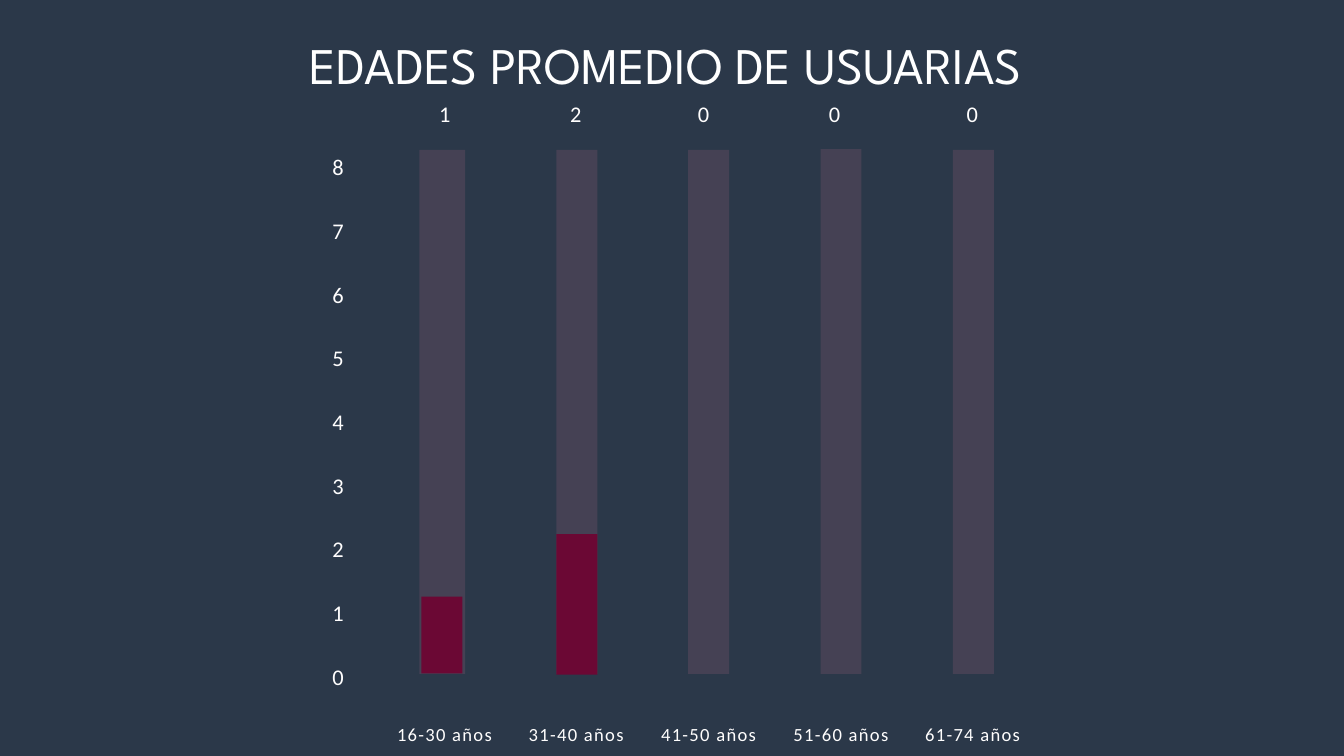
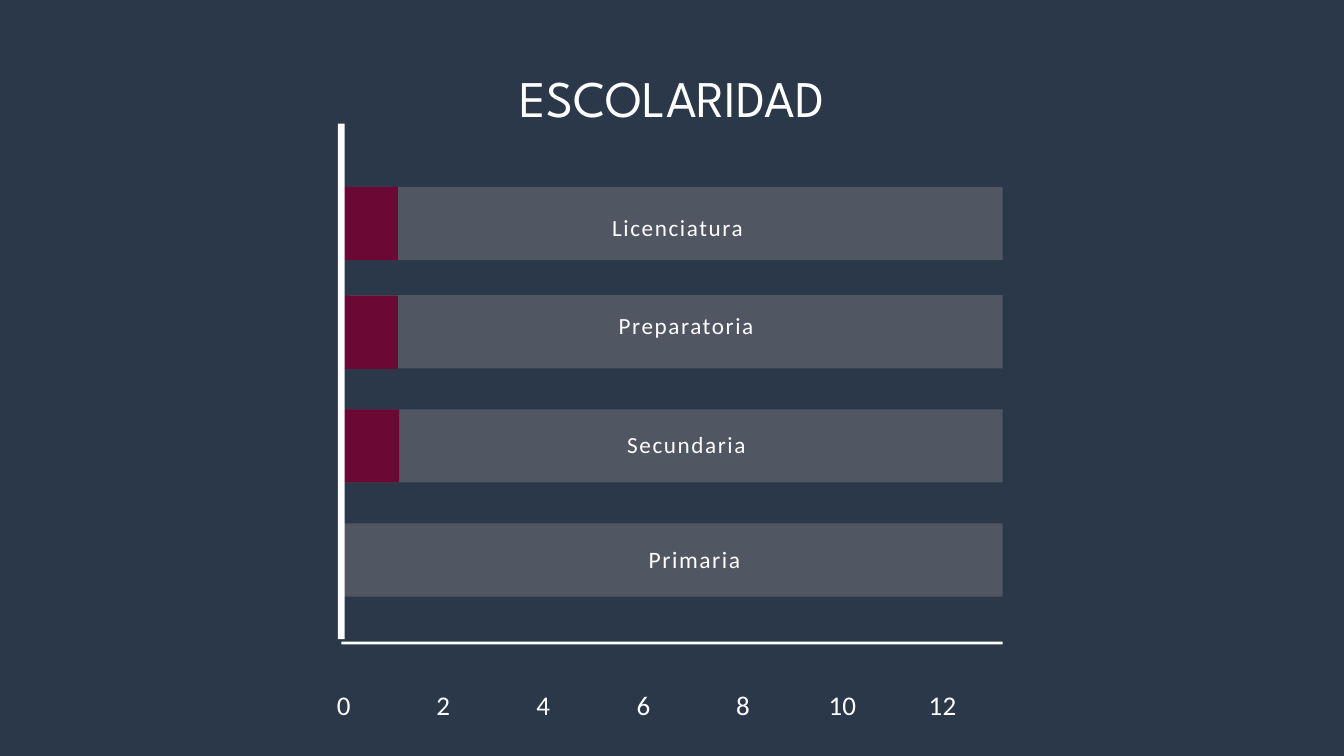
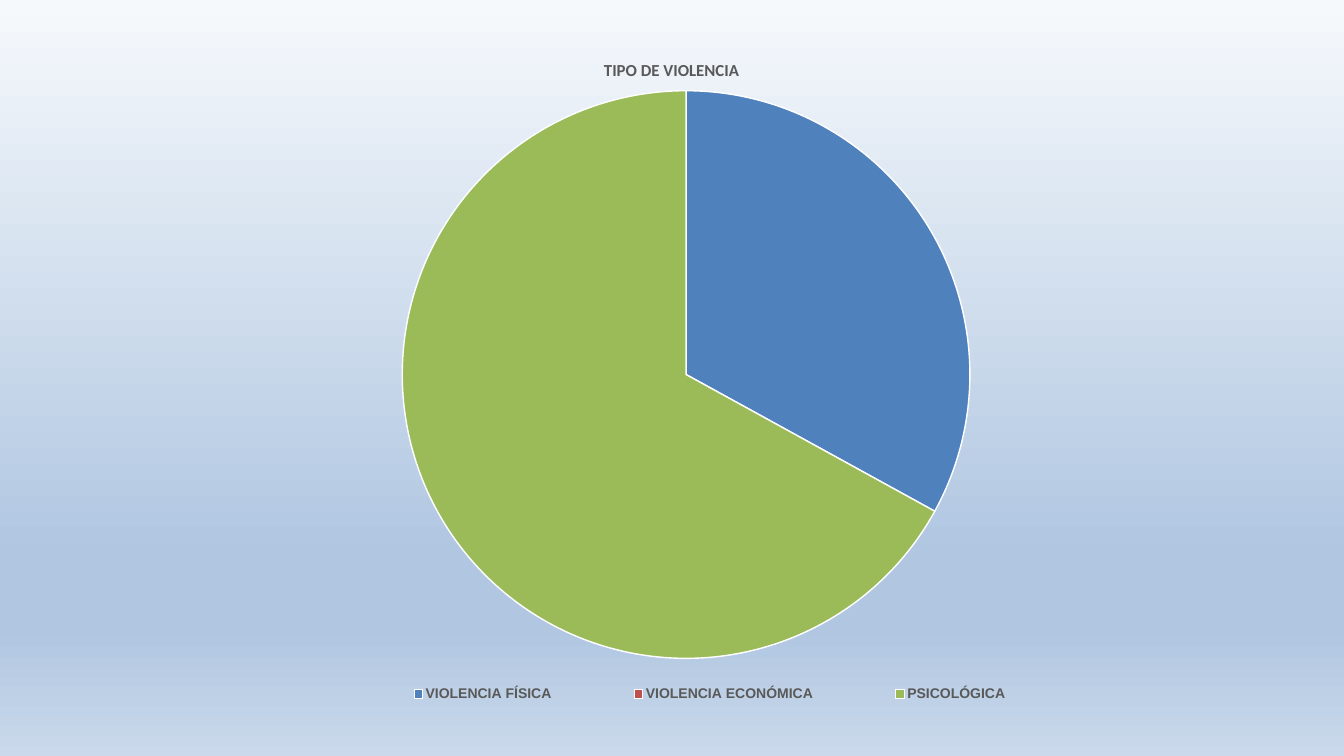
from dataclasses import dataclass

from pptx import Presentation
from pptx.chart.data import CategoryChartData
from pptx.dml.color import RGBColor
from pptx.enum.chart import XL_CHART_TYPE, XL_LEGEND_POSITION
from pptx.enum.shapes import MSO_SHAPE
from pptx.enum.text import MSO_ANCHOR, MSO_AUTO_SIZE, PP_ALIGN
from pptx.oxml import parse_xml
from pptx.oxml.ns import nsdecls, qn
from pptx.oxml.xmlchemy import OxmlElement
from pptx.presentation import Presentation as Deck
from pptx.slide import Slide
from pptx.util import Emu, Pt

PIE = XL_CHART_TYPE.PIE
LEGEND_BOTTOM = XL_LEGEND_POSITION.BOTTOM
RECTANGLE = MSO_SHAPE.RECTANGLE
TOP = MSO_ANCHOR.TOP
FIT_SHAPE = MSO_AUTO_SIZE.SHAPE_TO_FIT_TEXT
LEFT, CENTER = PP_ALIGN.LEFT, PP_ALIGN.CENTER

PX = 9144  # 100 px to the inch
TITLE_ONLY, BLANK = 5, 6
COLORS = {
    "background": "2B3849",
    "title": "FFFFFF",
    "label": "FFFEFE",
    "value": "6B0834",
    "age track": "9C617B",
    "school track": "D3BABD",
    "chart text": "595959",
    "slice line": "FFFFFF",
}
GRADIENT = ((0, "F6F9FC"), (74, "B0C6E1"), (83, "B0C6E1"), (100, "CAD9EB"))
TRACK_OPACITY = 23


@dataclass(frozen=True)
class Box:
    left: int
    top: int
    width: int
    height: int

    def emu(self) -> tuple[Emu, Emu, Emu, Emu]:
        lengths = (self.left, self.top, self.width, self.height)
        return tuple(Emu(length * PX) for length in lengths)


@dataclass(frozen=True)
class TextStyle:
    size: float
    leading: float
    tracking: float = 0
    font: str = "Calibri"
    color: str = "label"
    align: PP_ALIGN = CENTER


@dataclass(frozen=True)
class AgeGroup:
    label: str
    count: str
    count_left: int
    track: Box
    value: Box | None = None


@dataclass(frozen=True)
class SchoolLevel:
    label: str
    label_box: Box
    style: TextStyle
    track: Box
    value: Box | None = None


@dataclass(frozen=True)
class Slice:
    label: str
    percent: int
    color: str


TITLE = TextStyle(55, 77, font="League Spartan", color="title")
AGE_LABEL = TextStyle(19.9, 33.3, 1.4)
AGE_NUMBER = TextStyle(24, 36.8, 0.2)
SCHOOL_NUMBER = TextStyle(28.9, 44.2, 0.3)
SCHOOL_LABEL = TextStyle(24.8, 41.3, 1.7, color="title")
SCHOOL_LABEL_LEFT = TextStyle(24.8, 41.3, 1.7, color="title", align=LEFT)
SCHOOL_LABEL_LARGE = TextStyle(25.2, 42.1, 1.7, color="title")

AGE_GROUPS = (
    AgeGroup("16-30 años", "1", 630, Box(624, 223, 68, 780), Box(627, 888, 61, 114)),
    AgeGroup("31-40 años", "2", 825, Box(828, 223, 61, 780), Box(828, 795, 61, 209)),
    AgeGroup("41-50 años", "0", 1015, Box(1024, 223, 61, 780)),
    AgeGroup("51-60 años", "0", 1210, Box(1221, 222, 61, 781)),
    AgeGroup("61-74 años", "0", 1415, Box(1418, 223, 61, 780)),
)
SCHOOL_LEVELS = (
    SchoolLevel("Licenciatura", Box(911, 302, 515, 50), SCHOOL_LABEL_LEFT,
                Box(508, 278, 984, 109), Box(508, 278, 84, 109)),
    SchoolLevel("Preparatoria", Box(885, 448, 272, 51), SCHOOL_LABEL,
                Box(520, 439, 972, 109), Box(511, 440, 81, 109)),
    SchoolLevel("Secundaria", Box(764, 624, 515, 51), SCHOOL_LABEL,
                Box(508, 609, 984, 109), Box(508, 609, 86, 109)),
    SchoolLevel("Primaria", Box(776, 795, 515, 52), SCHOOL_LABEL_LARGE,
                Box(508, 779, 984, 109)),
)
SLICES = (
    Slice("VIOLENCIA FÍSICA", 33, "4F81BD"),
    Slice("VIOLENCIA ECONÓMICA", 0, "C0504D"),
    Slice("PSICOLÓGICA", 67, "9BBB59"),
)


def rgb(name: str) -> RGBColor:
    return RGBColor.from_string(COLORS[name])


def write_text(shape, text: str, style: TextStyle) -> None:
    frame = shape.text_frame
    frame.margin_left = frame.margin_right = 0
    frame.margin_top = frame.margin_bottom = 0
    frame.word_wrap = True
    frame.auto_size = FIT_SHAPE
    frame.vertical_anchor = TOP
    para = frame.paragraphs[0]
    para.alignment = style.align
    para.line_spacing = Pt(style.leading)
    para.space_before = Pt(0)
    span = para.add_run()
    span.text = text
    font = span.font
    font.name = style.font
    font.size = Pt(style.size)
    font.color.rgb = rgb(style.color)
    if style.tracking:
        span._r.get_or_add_rPr().set("spc", str(round(style.tracking * 100)))


def add_label(page: Slide, box: Box, text: str, style: TextStyle) -> None:
    write_text(page.shapes.add_textbox(*box.emu()), text, style)


def add_bar(page: Slide, box: Box, color: str, opacity: int = 100) -> None:
    bar = page.shapes.add_shape(RECTANGLE, *box.emu())
    bar.shadow.inherit = False
    bar.line.fill.background()
    bar.fill.solid()
    bar.fill.fore_color.rgb = rgb(color)
    if opacity < 100:
        alpha = OxmlElement("a:alpha")
        alpha.set("val", str(opacity * 1000))
        bar._element.spPr.find(".//" + qn("a:srgbClr")).append(alpha)


def add_titled_page(deck: Deck, title: str, top: int) -> Slide:
    page = deck.slides.add_slide(deck.slide_layouts[TITLE_ONLY])
    page.background.fill.solid()
    page.background.fill.fore_color.rgb = rgb("background")
    heading = page.shapes.title
    heading.left, heading.top, heading.width, heading.height = Box(249, top, 1502, 101).emu()
    write_text(heading, title, TITLE)
    return page


def add_ages_page(deck: Deck) -> None:
    page = add_titled_page(deck, "EDADES PROMEDIO DE USUARIAS ", 34)
    for index, group in enumerate(AGE_GROUPS):
        label_box = Box(580 + round(196.5 * index), 1063, 163, 41)
        add_label(page, label_box, group.label, AGE_LABEL)
        add_label(page, Box(group.count_left, 138, 64, 47), group.count, AGE_NUMBER)
        add_bar(page, group.track, "age track", TRACK_OPACITY)
        if group.value:
            add_bar(page, group.value, "value")
    for number in range(9):
        number_box = Box(471, 975 - round(94.75 * number), 64, 45)
        add_label(page, number_box, str(number), AGE_NUMBER)


def add_schooling_page(deck: Deck) -> None:
    page = add_titled_page(deck, "ESCOLARIDAD", 83)
    for level in SCHOOL_LEVELS:
        add_bar(page, level.track, "school track", TRACK_OPACITY)
        if level.value:
            add_bar(page, level.value, "value")
        add_label(page, level.label_box, level.label, level.style)
    for axis in (Box(503, 184, 10, 767), Box(508, 955, 984, 4)):
        add_bar(page, axis, "label")
    for index in range(7):
        number_box = Box(466 + round(148.5 * index), 1012, 91, 55)
        add_label(page, number_box, str(2 * index), SCHOOL_NUMBER)


def paint_gradient(page: Slide) -> None:
    fill = page.background.fill
    fill.gradient()
    fill.gradient_angle = 270
    stops = page._element.find(".//" + qn("a:gsLst"))
    for stop in list(stops):
        stops.remove(stop)
    for percent, color in GRADIENT:
        stops.append(parse_xml(
            f'<a:gs {nsdecls("a")} pos="{percent * 1000}"><a:srgbClr val="{color}"/></a:gs>'))


def place_chart_part(part, inner: bool = False, **fractions: float) -> None:
    """Set a manual layout, in fractions of the chart, on a chart element."""
    for old in part.findall(qn("c:layout")):
        part.remove(old)
    settings = [("layoutTarget", "inner")] if inner else []
    settings += [("xMode", "edge"), ("yMode", "edge"), *fractions.items()]
    body = "".join(f'<c:{name} val="{value}"/>' for name, value in settings)
    layout = parse_xml(f'<c:layout {nsdecls("c")}><c:manualLayout>{body}'
                       "</c:manualLayout></c:layout>")
    before = [child for child in part if child.tag in (qn("c:tx"), qn("c:legendPos"))]
    part.insert(len(before), layout)


def add_violence_page(deck: Deck) -> None:
    page = deck.slides.add_slide(deck.slide_layouts[BLANK])
    paint_gradient(page)
    data = CategoryChartData()
    data.categories = [piece.label for piece in SLICES]
    data.add_series("Series 1", [piece.percent for piece in SLICES])
    chart = page.shapes.add_chart(PIE, *Box(317, 62, 1408, 1011).emu(), data).chart
    chart.font.name = "Calibri"
    chart.font.size = Pt(10)

    chart.has_title = True
    span = chart.chart_title.text_frame.paragraphs[0].add_run()
    span.text = "TIPO DE VIOLENCIA"
    chart.has_legend = True
    chart.legend.position = LEGEND_BOTTOM
    chart.legend.include_in_layout = False
    for font, name, size in ((span.font, "Calibri", 18), (chart.legend.font, "Arial", 15)):
        font.name = name
        font.size = Pt(size)
        font.bold = True
        font.color.rgb = rgb("chart text")

    plot = chart.plots[0]
    plot.vary_by_categories = True
    for index, piece in enumerate(SLICES):
        style = plot.series[0].points[index].format
        style.fill.solid()
        style.fill.fore_color.rgb = RGBColor.from_string(piece.color)
        style.line.color.rgb = rgb("slice line")
        style.line.width = Pt(1.5)

    place_chart_part(chart.chart_title._element, x=0.41, y=0.02)
    place_chart_part(chart._chartSpace.chart.plotArea, inner=True, x=0.2, y=0.05, w=0.6, h=0.88)
    place_chart_part(chart.legend._element, x=0.13, y=0.93, w=0.79, h=0.06)


def main() -> None:
    deck = Presentation()
    deck.slide_width, deck.slide_height = Emu(2000 * PX), Emu(1125 * PX)
    add_ages_page(deck)
    add_schooling_page(deck)
    add_violence_page(deck)
    deck.save("out.pptx")


if __name__ == "__main__":
    main()
